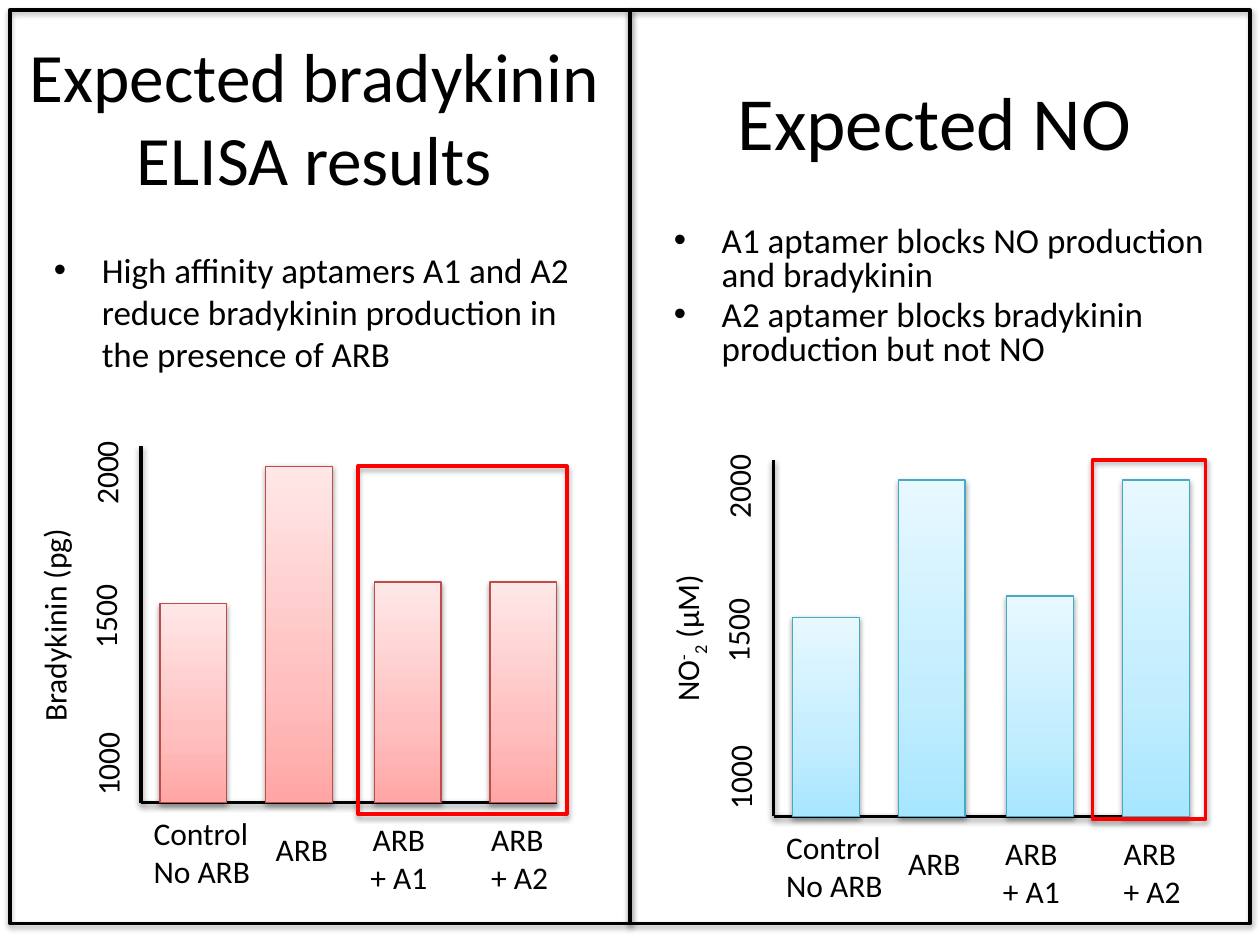
from pptx import Presentation
from pptx import util as u
from pptx.dml.color import RGBColor
from pptx.enum import shapes, text
from pptx.oxml import parse_xml
from pptx.oxml.ns import nsdecls, qn

BLACK = RGBColor(0, 0, 0)
RED = RGBColor(0xFF, 0, 0)
BAR_RED = RGBColor(0xBF, 0x4C, 0x48)
BAR_BLUE = RGBColor(0x46, 0xAA, 0xC5)
PINKS = [(0, "FFA6A5"), (35, "FFC0BF"), (100, "FFE7E7")]
BLUES = [(0, "A7E6FF"), (35, "C1EDFF"), (100, "E7F8FF")]

W, H, MARGIN = 10, 7.5, 0.08
PANEL_W = W / 2 - MARGIN
INDENT = 0.38

# Boxes are (left, top, width, height) in inches; runs are (text, baseline).
PANELS = [
    dict(title="Expected bradykinin ELISA results", title_size=39.6,
         title_box=(0.08, 0.3, 4.83, 1.25),
         bullets=["High affinity aptamers A1 and A2 reduce bradykinin "
                  "production in the presence of ARB"],
         bullets_box=(0.33, 1.92, 4.5, 1.25), spacing=None,
         origin=(1.12, 6.37), axis_title=[("Bradykinin (pg)", 0)], axis_title_y=-1.42,
         heights=[1.58, 2.67, 1.75, 1.75], stops=PINKS, edge=BAR_RED,
         highlight=(2.84, 3.7, 1.66, 2.76)),
    dict(title="Expected NO", title_size=42.9,
         title_box=(5, 0.33, 4.83, 1.25),
         bullets=["A1 aptamer blocks NO production and bradykinin",
                  "A2 aptamer blocks bradykinin production but not NO"],
         bullets_box=(5.25, 1.75, 4.5, 1.25), spacing=0.8,
         origin=(6.14, 6.48),
         axis_title=[("NO", 0), ("-", 30), ("2", -25), (" (µM)", 0)], axis_title_y=-1.69,
         heights=[1.58, 2.67, 1.75, 2.67], stops=BLUES, edge=BAR_BLUE,
         highlight=(8.67, 3.65, 0.9, 2.85)),
]
# Offsets below are measured from the origin of each chart's axes.
AXIS_W, AXIS_H = 3.3, 2.83
BAR_X, BAR_W = [0.15, 0.99, 1.85, 2.77], 0.53
TICKS = [("2000", -0.28, -2.63, 0.73), ("1000", -0.27, -0.37, 0.83),
         ("1500", -0.29, -1.54, 0.83)]  # text, centre x, centre y, length
CATEGORIES = [(["Control", "No ARB"], 0, 0.04, 0.98), (["ARB"], 0.97, 0.17, 0.8),
              (["ARB", "+ A1"], 1.69, 0.09, 0.71), (["ARB", "+ A2"], 2.68, 0.09, 0.7)]
LINE_H, AXIS_TITLE_W, AXIS_TITLE_X = 0.4, 1.75, -0.69


def inches(*values):
    return [u.Inches(v) for v in values]


def add_shadow(sp, alpha, dist):
    sp._element.spPr.append(parse_xml(
        f'<a:effectLst {nsdecls("a")}><a:outerShdw blurRad="40000" dist="{dist}" '
        f'dir="5400000" rotWithShape="0"><a:srgbClr val="000000">'
        f'<a:alpha val="{alpha * 1000}"/></a:srgbClr></a:outerShdw></a:effectLst>'))


def add_text(parent, box, paragraphs, size=18, align=text.PP_ALIGN.LEFT,
             anchor=text.MSO_ANCHOR.TOP, rotation=0):
    """Each paragraph is a list of (text, baseline) runs."""
    sp = parent.add_textbox(*inches(*box))
    sp.rotation = rotation
    tf = sp.text_frame
    tf.word_wrap = True
    tf.vertical_anchor = anchor
    for i, runs in enumerate(paragraphs):
        p = tf.add_paragraph() if i else tf.paragraphs[0]
        p.alignment = align
        for words, baseline in runs:
            r = p.add_run()
            r.text = words
            r.font.name, r.font.size = "Calibri", u.Pt(size)
            r.font.color.rgb = BLACK
            if baseline:
                r._r.get_or_add_rPr().set("baseline", str(baseline * 1000))
    return tf


def add_vertical_text(parent, x, y, length, runs):
    """Text reading upwards, in a box centred on x, y."""
    box = (x - length / 2, y - LINE_H / 2, length, LINE_H)
    add_text(parent, box, [runs], rotation=270)


def add_bullets(parent, box, bullets, spacing):
    tf = add_text(parent, box, [[(b, 0)] for b in bullets], size=20)
    for i, p in enumerate(tf.paragraphs):
        pPr = p._p.get_or_add_pPr()
        pPr.set("marL", str(u.Inches(INDENT)))
        pPr.set("indent", str(-u.Inches(INDENT)))
        pPr.append(parse_xml(f'<a:buFont {nsdecls("a")} typeface="Arial"/>'))
        pPr.append(parse_xml(f'<a:buChar {nsdecls("a")} char="•"/>'))
        if spacing:
            p.line_spacing = spacing
        if i:
            p.space_before = u.Pt(4)


def add_frame(parent, box, color):
    sp = parent.add_shape(shapes.MSO_SHAPE.RECTANGLE, *inches(*box))
    sp.fill.background()
    sp.line.color.rgb, sp.line.width = color, u.Pt(2)
    add_shadow(sp, 35, 23000)


def add_axis(parent, x1, y1, x2, y2):
    line = parent.add_connector(shapes.MSO_CONNECTOR.STRAIGHT, *inches(x1, y1, x2, y2))
    line.line.color.rgb, line.line.width = BLACK, u.Pt(2)
    add_shadow(line, 38, 20000)


def add_bar(parent, box, stops, edge):
    sp = parent.add_shape(shapes.MSO_SHAPE.RECTANGLE, *inches(*box))
    sp.fill.gradient()
    spPr = sp._element.spPr
    gs = "".join(f'<a:gs pos="{pos * 1000}"><a:srgbClr val="{color}"/></a:gs>'
                 for pos, color in stops)
    spPr.replace(spPr.find(qn("a:gradFill")), parse_xml(
        f'<a:gradFill {nsdecls("a")} rotWithShape="1"><a:gsLst>{gs}</a:gsLst>'
        '<a:lin ang="16200000" scaled="0"/></a:gradFill>'))
    sp.line.color.rgb, sp.line.width = edge, u.Pt(0.75)
    add_shadow(sp, 38, 20000)


def add_bar_drawing(slide, panel):
    group = slide.shapes.add_group_shape().shapes
    x, y = panel["origin"]
    add_axis(group, x, y - AXIS_H, x, y)
    add_axis(group, x, y, x + AXIS_W, y)
    add_vertical_text(group, x + AXIS_TITLE_X, y + panel["axis_title_y"],
                      AXIS_TITLE_W, panel["axis_title"])
    for label, dx, dy, length in TICKS:
        add_vertical_text(group, x + dx, y + dy, length, [(label, 0)])
    for dx, height in zip(BAR_X, panel["heights"]):
        add_bar(group, (x + dx, y - height, BAR_W, height), panel["stops"], panel["edge"])
    for lines, dx, dy, width in CATEGORIES:
        height = LINE_H + 0.31 * (len(lines) - 1)
        align = text.PP_ALIGN.CENTER if "+ A1" in lines else text.PP_ALIGN.LEFT
        add_text(group, (x + dx, y + dy, width, height),
                 [[(line, 0)] for line in lines], align=align)


def main():
    prs = Presentation()
    prs.slide_width, prs.slide_height = inches(W, H)
    slide = prs.slides.add_slide(prs.slide_layouts[6])
    for i, panel in enumerate(PANELS):
        add_text(slide.shapes, panel["title_box"], [[(panel["title"], 0)]],
                 panel["title_size"], text.PP_ALIGN.CENTER, text.MSO_ANCHOR.MIDDLE)
        add_bullets(slide.shapes, panel["bullets_box"], panel["bullets"], panel["spacing"])
        add_bar_drawing(slide, panel)
        add_frame(slide.shapes, (MARGIN + i * PANEL_W, MARGIN, PANEL_W, 7.25), BLACK)
    for panel in PANELS:
        add_frame(slide.shapes, panel["highlight"], RED)
    prs.save("out.pptx")


if __name__ == "__main__":
    main()
